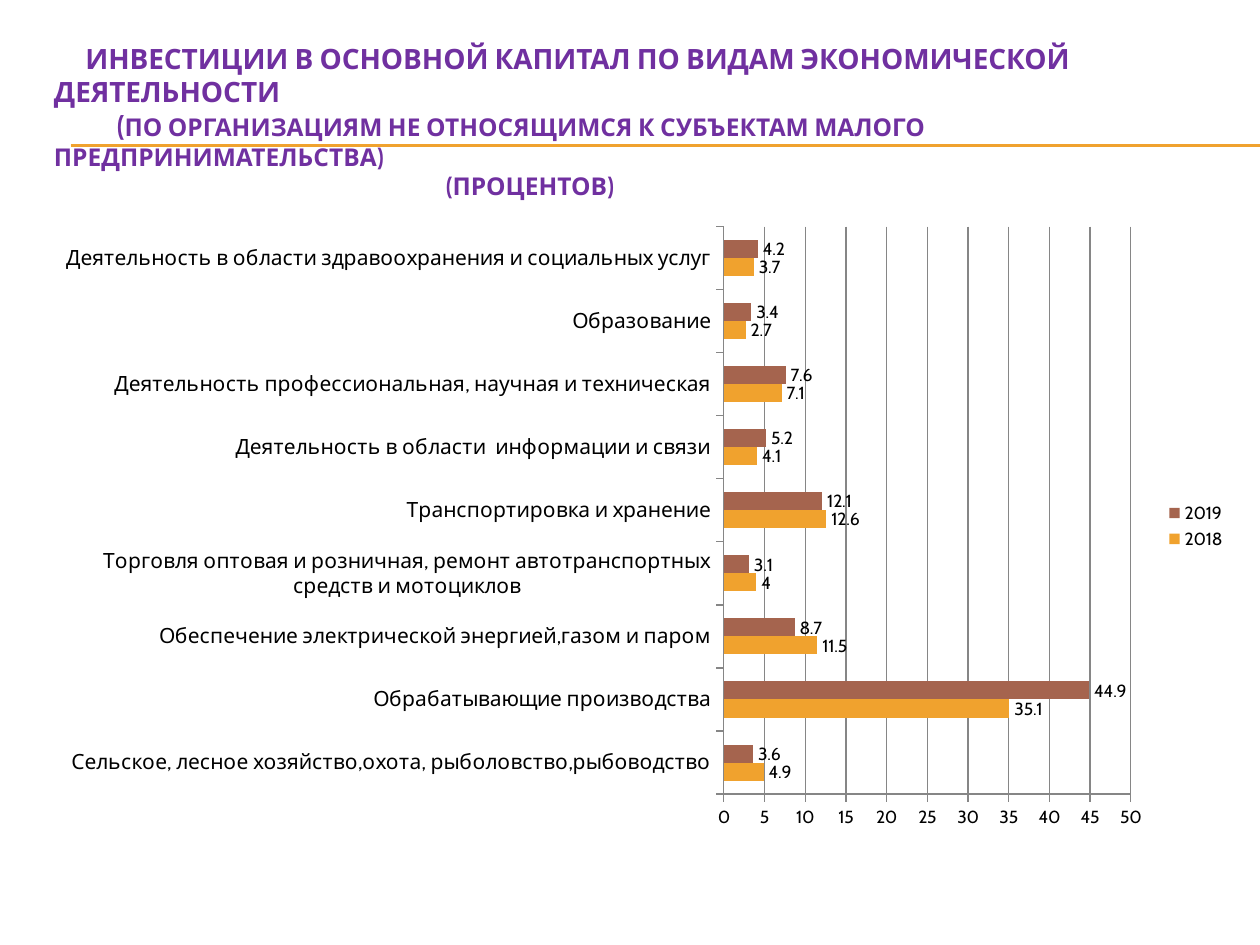
"""Build a slide with a bar chart of fixed capital investment by economic activity."""
from lxml import etree
from pptx import Presentation
from pptx.chart.data import CategoryChartData
from pptx.dml.color import RGBColor
from pptx.enum.chart import XL_CHART_TYPE as ChartType, XL_LABEL_POSITION as LabelPosition
from pptx.enum.chart import XL_LEGEND_POSITION as LegendPosition, XL_TICK_MARK as TickMark
from pptx.enum.text import MSO_ANCHOR as Anchor
from pptx.oxml import parse_xml
from pptx.oxml.ns import nsdecls, qn
from pptx.util import Inches, Pt

PURPLE = RGBColor(0x70, 0x30, 0xA0)
ORANGE = RGBColor(0xF0, 0xA2, 0x2E)
BROWN = RGBColor(0xA5, 0x64, 0x4E)
GRAY = RGBColor(0x86, 0x86, 0x86)
BLACK = RGBColor(0, 0, 0)
FONT = "Cabin"

TITLE_LINES = [
    (0.25, [("ИНВЕСТИЦИИ В ОСНОВНОЙ КАПИТАЛ ПО ВИДАМ ЭКОНОМИЧЕСКОЙ ДЕЯТЕЛЬНОСТИ", 16)]),
    (0.5, [("(", 16),
           ("ПО ОРГАНИЗАЦИЯМ НЕ ОТНОСЯЩИМСЯ К СУБЪЕКТАМ МАЛОГО ПРЕДПРИНИМАТЕЛЬСТВА)", 14)]),
    (3.11, [("(ПРОЦЕНТОВ)", 14)]),
]
ACTIVITIES = [
    ("Сельское, лесное хозяйство,охота, рыболовство,рыбоводство", 4.9, 3.6),
    ("Обрабатывающие производства", 35.1, 44.9),
    ("Обеспечение электрической энергией,газом и паром", 11.5, 8.7),
    ("Торговля оптовая и розничная, ремонт автотранспортных средств и мотоциклов", 4, 3.1),
    ("Транспортировка и хранение", 12.6, 12.1),
    ("Деятельность в области  информации и связи", 4.1, 5.2),
    ("Деятельность профессиональная, научная и техническая", 7.1, 7.6),
    ("Образование", 2.7, 3.4),
    ("Деятельность в области здравоохранения и социальных услуг", 3.7, 4.2),
]

deck = Presentation()
deck.slide_width, deck.slide_height = Inches(10), Inches(7.5)
page = deck.slides.add_slide(deck.slide_layouts[6])

for height in (1.15, 1.16):
    rule = page.shapes.add_connector(1, Inches(0.56), Inches(height), Inches(10), Inches(height))
    rule.line.color.rgb = ORANGE
    rule.line.width = Pt(0.75)
    etree.SubElement(rule._element.spPr, qn("a:effectLst"))

title_box = page.shapes.add_textbox(Inches(0.33), Inches(0.5), Inches(9.5), Inches(0.92))
frame = title_box.text_frame
frame.word_wrap = True
frame.vertical_anchor = Anchor.MIDDLE
for number, (indent, pieces) in enumerate(TITLE_LINES):
    para = frame.add_paragraph() if number else frame.paragraphs[0]
    para._p.get_or_add_pPr().set("indent", str(Inches(indent)))
    para.font.name = FONT
    para.font.bold = True
    para.font.color.rgb = PURPLE
    for words, size in pieces:
        span = para.add_run()
        span.text = words
        span.font.size = Pt(size)

names, shares_2018, shares_2019 = zip(*ACTIVITIES)
data = CategoryChartData()
data.categories = names
data.add_series("2018", shares_2018)
data.add_series("2019", shares_2019)
chart = page.shapes.add_chart(ChartType.BAR_CLUSTERED, Inches(0.33), Inches(1.7),
                              Inches(9.5), Inches(4.95), data).chart
chart.has_title = False
chart.font.name = FONT
chart.font.size = Pt(10)
chart.font.color.rgb = BLACK
chart.has_legend = True
chart.legend.position = LegendPosition.RIGHT
chart.legend.include_in_layout = False

plot = chart.plots[0]
plot.vary_by_categories = False
plot.gap_width = 150
plot.overlap = 0
for series, color in zip(plot.series, (ORANGE, BROWN)):
    series.format.fill.solid()
    series.format.fill.fore_color.rgb = color
    series.invert_if_negative = False
    series.data_labels.show_value = True
    series.data_labels.position = LabelPosition.OUTSIDE_END

for axis in (chart.category_axis, chart.value_axis):
    axis.major_tick_mark = TickMark.OUTSIDE
    axis.minor_tick_mark = TickMark.NONE
    axis.format.line.color.rgb = GRAY
chart.category_axis.tick_labels.font.size = Pt(12)
chart.value_axis.minimum_scale = 0
chart.value_axis.maximum_scale = 50
chart.value_axis.major_unit = 5
chart.value_axis.has_major_gridlines = True
chart.value_axis.major_gridlines.format.line.color.rgb = GRAY

plot_area = chart._chartSpace.chart.plotArea
for layout in plot_area.findall(qn("c:layout")):
    plot_area.remove(layout)
plot_area.insert(0, parse_xml(
    f'<c:layout {nsdecls("c")}><c:manualLayout><c:layoutTarget val="inner"/>'
    '<c:xMode val="edge"/><c:yMode val="edge"/><c:x val="0.57"/><c:y val="0.02"/>'
    '<c:w val="0.34"/><c:h val="0.91"/></c:manualLayout></c:layout>'))

deck.save("out.pptx")
